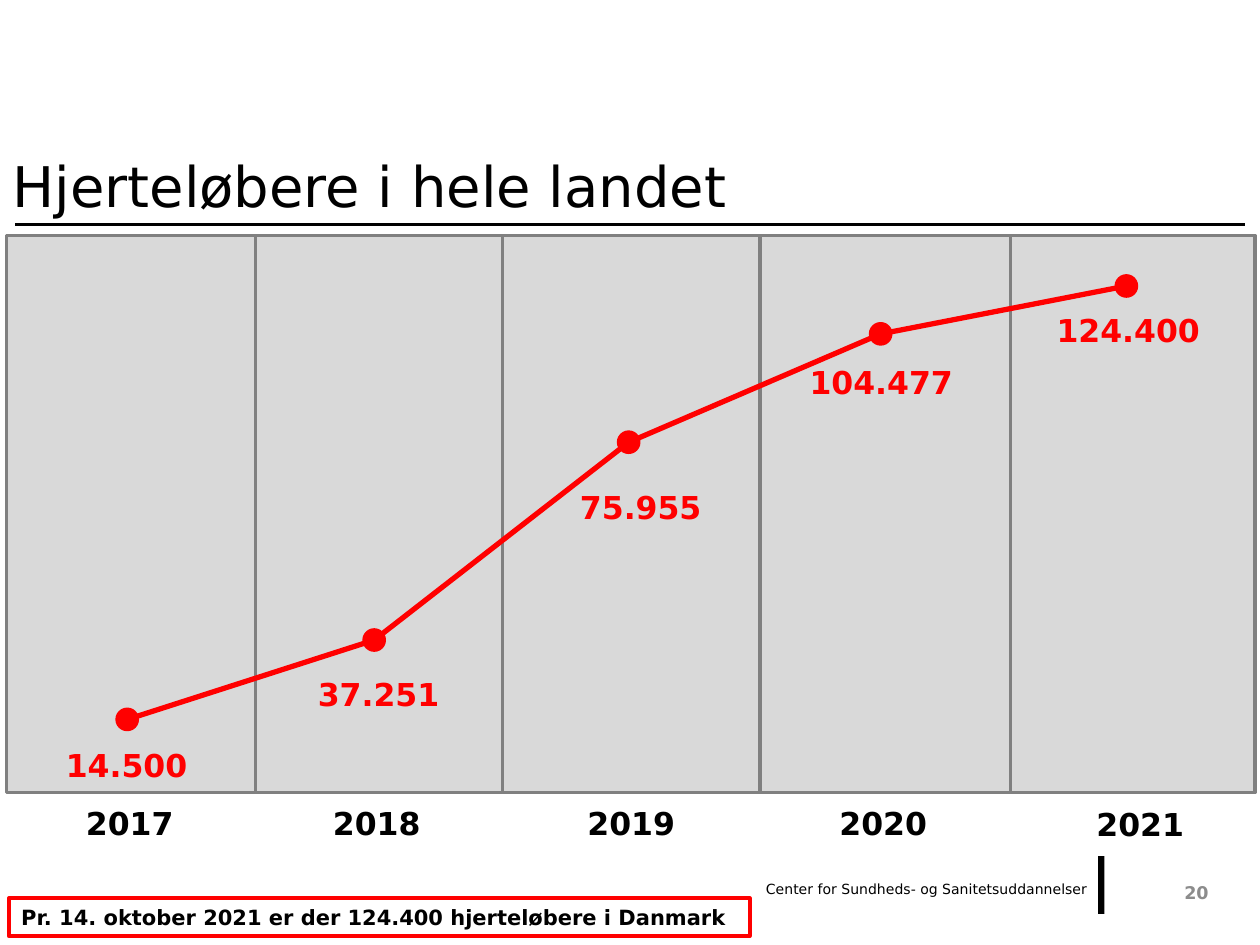
"""Build the slide showing registered heart runners in Denmark by year."""
from itertools import pairwise
from lxml import etree
from pptx import Presentation
from pptx.dml.color import RGBColor
from pptx.enum import shapes, text
from pptx.oxml.ns import qn
from pptx.util import Inches, Pt

BLACK = RGBColor(0x00, 0x00, 0x00)
RED = RGBColor(0xFF, 0x00, 0x00)
PANEL = RGBColor(0xD9, 0xD9, 0xD9)
BORDER = RGBColor(0x80, 0x80, 0x80)
MUTED = RGBColor(0x8C, 0x8C, 0x8C)
FONT = "DejaVu Sans"
LEFT, CENTER, RIGHT = text.PP_ALIGN.LEFT, text.PP_ALIGN.CENTER, text.PP_ALIGN.RIGHT

prs = Presentation()
prs.slide_width, prs.slide_height = Inches(10), Inches(7.5)
s = prs.slides.add_slide(prs.slide_layouts[5])


def write(sp, content, size, color=BLACK, bold=False, align=CENTER, wrap=True):
    tf = sp.text_frame
    tf.word_wrap = wrap
    tf.auto_size = text.MSO_AUTO_SIZE.NONE
    tf.vertical_anchor = text.MSO_ANCHOR.MIDDLE
    p = tf.paragraphs[0]
    p.alignment = align
    r = p.add_run()
    r.text = content
    r.font.name, r.font.size, r.font.bold = FONT, Pt(size), bold
    r.font.color.rgb = color


def add_line(start, end, color, width):
    ln = s.shapes.add_connector(shapes.MSO_CONNECTOR.STRAIGHT, *map(Inches, start + end))
    ln.line.color.rgb = color
    ln.line.width = Pt(width)
    etree.SubElement(ln._element.spPr, qn("a:effectLst"))


title = s.shapes.title
title.left, title.top, title.width, title.height = map(Inches, (0, 1.15, 10, 0.64))
write(title, "Hjerteløbere i hele landet", 32, align=LEFT)

edges = [0.05, 2.03, 3.99, 6.03, 8.02, 9.96]
for left, right in pairwise(edges):
    sp = s.shapes.add_shape(shapes.MSO_SHAPE.RECTANGLE, Inches(left), Inches(1.87),
                            Inches(right - left), Inches(4.42))
    sp.shadow.inherit = False
    sp.fill.solid()
    sp.fill.fore_color.rgb = PANEL
    sp.line.color.rgb = BORDER
    sp.line.width = Pt(2)

years = [("2017", 0.44, 6.33), ("2018", 2.4, 6.33), ("2019", 4.42, 6.33),
         ("2020", 6.42, 6.33), ("2021", 8.46, 6.34)]
for year, left, top in years:
    sp = s.shapes.add_textbox(Inches(left), Inches(top), Inches(1.18), Inches(0.4))
    write(sp, year, 18, bold=True)

points = [(1.01, 5.71), (2.97, 5.08), (4.99, 3.51), (6.99, 2.65), (8.94, 2.27)]
for start, end in pairwise(points):
    add_line(start, end, RED, 3)
for x, y in points:
    sp = s.shapes.add_shape(shapes.MSO_SHAPE.FLOWCHART_CONNECTOR, Inches(x - 0.08),
                            Inches(y - 0.08), Inches(0.16), Inches(0.16))
    sp.shadow.inherit = False
    sp.fill.solid()
    sp.fill.fore_color.rgb = RED
    sp.line.color.rgb = RED
    sp.line.width = Pt(2)

values = [("14.500", 0.41, 5.87, 1.19), ("37.251", 2.41, 5.31, 1.19),
          ("75.955", 4.49, 3.82, 1.19), ("104.477", 6.31, 2.83, 1.37),
          ("124.400", 8.27, 2.42, 1.37)]
for value, left, top, width in values:
    sp = s.shapes.add_textbox(Inches(left), Inches(top), Inches(width), Inches(0.4))
    write(sp, value, 18, RED, bold=True, wrap=False)

add_line((0.12, 1.78), (9.88, 1.78), BLACK, 1.5)

note = s.shapes.add_shape(shapes.MSO_SHAPE.RECTANGLE, Inches(0.07), Inches(7.13),
                          Inches(5.88), Inches(0.3))
note.shadow.inherit = False
note.fill.background()
note.line.color.rgb = RED
note.line.width = Pt(2.25)
write(note, "Pr. 14. oktober 2021 er der 124.400 hjerteløbere i Danmark", 12,
      bold=True, align=LEFT)

footer = s.shapes.add_textbox(Inches(5.94), Inches(6.93), Inches(2.79), Inches(0.25))
write(footer, "Center for Sundheds- og Sanitetsuddannelser", 8, align=RIGHT, wrap=False)

bar = s.shapes.add_shape(shapes.MSO_SHAPE.RECTANGLE, Inches(8.51), Inches(7),
                         Inches(0.46), Inches(0.05))
bar.rotation = 90
bar.shadow.inherit = False
bar.fill.solid()
bar.fill.fore_color.rgb = BLACK
bar.line.fill.background()

number = s.shapes.add_textbox(Inches(9.17), Inches(6.88), Inches(0.52), Inches(0.4))
write(number, "20", 10, MUTED, bold=True, align=RIGHT)

prs.save("out.pptx")
